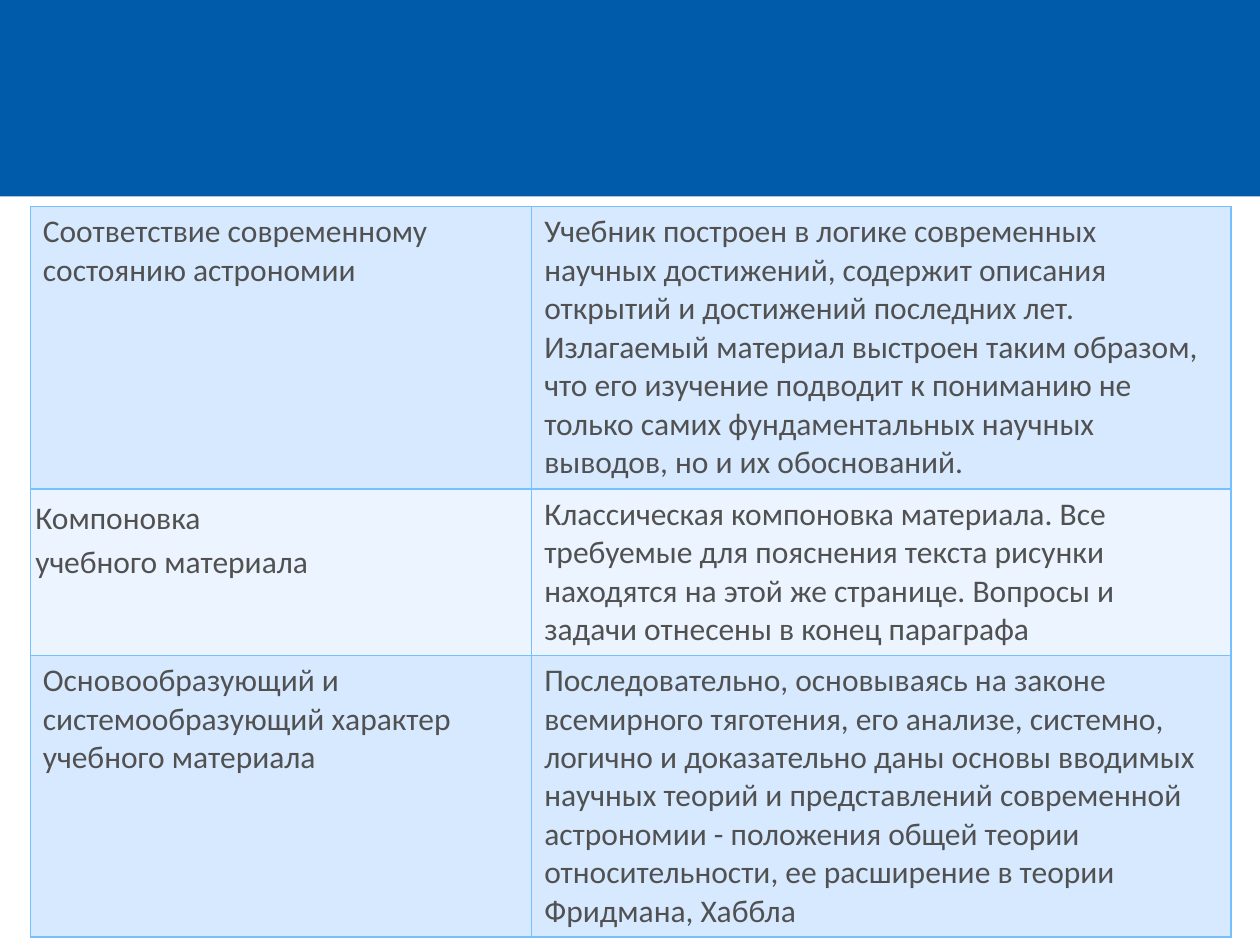
from lxml import etree
from pptx import Presentation
from pptx.dml.color import RGBColor
from pptx.enum.shapes import MSO_SHAPE
from pptx.oxml.ns import qn
from pptx.util import Inches, Pt

RECTANGLE = MSO_SHAPE.RECTANGLE
BLUE = RGBColor(0x00, 0x5C, 0xAB)
BORDER = RGBColor(0x75, 0xC1, 0xFF)
BAND = RGBColor(0xD6, 0xE9, 0xFF)
PALE_BAND = RGBColor(0xEC, 0xF4, 0xFF)
GREY = RGBColor(0x51, 0x51, 0x51)


def write_text(frame, text, size=18, font="Calibri", color=GREY, spacing=1.0):
    for index, line in enumerate(text.split("\n")):
        para = frame.paragraphs[0] if index == 0 else frame.add_paragraph()
        para.line_spacing = spacing
        span = para.add_run()
        span.text = line
        span.font.size = Pt(size)
        span.font.name = font
        span.font.color.rgb = color


def add_borders(cell, color, width):
    properties = cell._tc.get_or_add_tcPr()
    for side in ("lnL", "lnR", "lnT", "lnB"):
        line = etree.SubElement(properties, qn(f"a:{side}"), w=str(Pt(width)))
        fill = etree.SubElement(line, qn("a:solidFill"))
        etree.SubElement(fill, qn("a:srgbClr"), val=str(color))


deck = Presentation()
deck.slide_width = Inches(10)
deck.slide_height = Inches(7.5)
page = deck.slides.add_slide(deck.slide_layouts[6])

banner = page.shapes.add_shape(RECTANGLE, 0, 0, Inches(10), Inches(1.56))
banner.shadow.inherit = False
banner.fill.solid()
banner.fill.fore_color.rgb = BLUE
banner.line.fill.background()

criteria = [
    ("Соответствие современному\nсостоянию астрономии",
     "Учебник построен в логике современных научных достижений, содержит "
     "описания открытий и достижений последних лет. Излагаемый материал "
     "выстроен таким образом, что его изучение подводит к пониманию не только "
     "самих фундаментальных научных выводов, но и их обоснований."),
    ("Компоновка\nучебного материала",
     "Классическая компоновка материала. Все требуемые для пояснения текста "
     "рисунки находятся на этой же странице. Вопросы и задачи отнесены в "
     "конец параграфа"),
    ("Основообразующий и системообразующий характер учебного материала",
     "Последовательно, основываясь на законе всемирного тяготения, его "
     "анализе, системно, логично и доказательно даны основы вводимых научных "
     "теорий и представлений современной астрономии - положения общей теории "
     "относительности, ее расширение в теории Фридмана, Хаббла"),
]
column_widths = [3.98, 5.55]
row_heights = [2.24, 1.32, 2.23]

table = page.shapes.add_table(
    len(criteria), len(column_widths), Inches(0.24), Inches(1.64),
    Inches(sum(column_widths)), Inches(sum(row_heights))).table
for column, width in zip(table.columns, column_widths):
    column.width = Inches(width)
for row, height in zip(table.rows, row_heights):
    row.height = Inches(height)

for row_index, texts in enumerate(criteria):
    for column_index, text in enumerate(texts):
        cell = table.cell(row_index, column_index)
        add_borders(cell, BORDER, 1)
        cell.fill.solid()
        cell.fill.fore_color.rgb = PALE_BAND if row_index % 2 else BAND
        is_layout_label = (row_index, column_index) == (1, 0)
        if is_layout_label:
            cell.margin_left = cell.margin_right = Inches(0.04)
            cell.margin_top = cell.margin_bottom = Inches(0.04)
        elif column_index == 1:
            cell.margin_right = Inches(0.2)
        write_text(cell.text_frame, text, spacing=1.15 if is_layout_label else 1.0)

deck.save("out.pptx")
